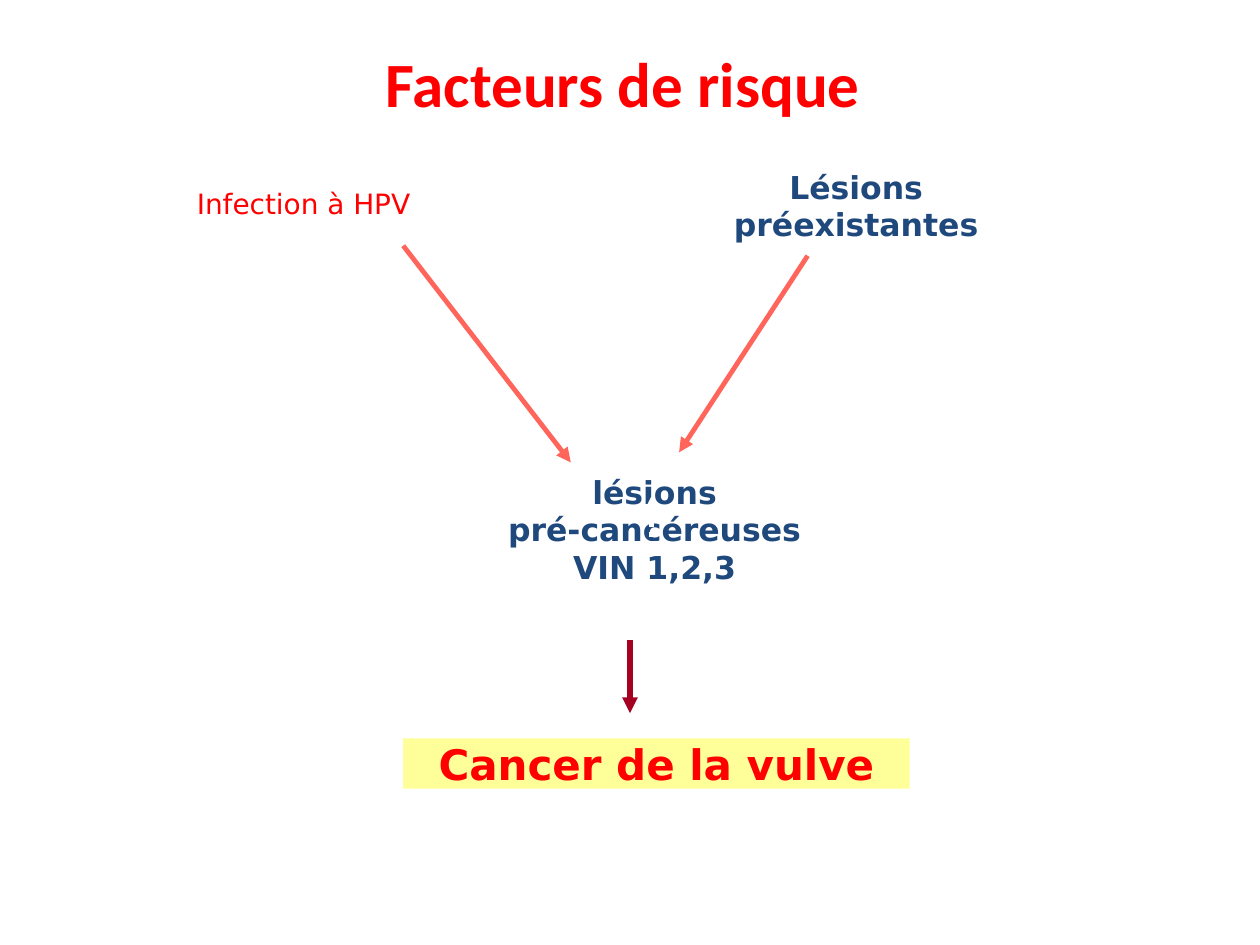
from lxml.etree import SubElement
from pptx import Presentation
from pptx.dml.color import RGBColor
from pptx.enum.dml import MSO_LINE
from pptx.enum.shapes import MSO_CONNECTOR
from pptx.enum.text import MSO_ANCHOR, MSO_AUTO_SIZE, PP_ALIGN
from pptx.oxml.ns import qn
from pptx.util import Inches, Pt

RED, NAVY, CORAL, CRIMSON = "FF0000", "1F497D", "FF655A", "A50021"
WHITE, YELLOW = "FFFFFF", "FFFF99"


def color(value):
    """Turn a hex string into a colour."""
    return RGBColor.from_string(value)


def place(shape, left, top, width, height):
    """Set the position and size of a shape in inches."""
    shape.left, shape.top = Inches(left), Inches(top)
    shape.width, shape.height = Inches(width), Inches(height)


def format_text(frame, size, hue, font="DejaVu Sans", bold=True):
    """Centre every paragraph and format its runs."""
    for paragraph in frame.paragraphs:
        paragraph.alignment = PP_ALIGN.CENTER
        for run in paragraph.runs:
            run.font.name = font
            run.font.size = Pt(size)
            run.font.bold = bold
            run.font.color.rgb = color(hue)


def add_title(slide, text):
    """Fill and place the title placeholder."""
    title = slide.shapes.title
    place(title, 0.75, 0.23, 8.5, 0.85)
    title.text_frame.text = text
    title.text_frame.vertical_anchor = MSO_ANCHOR.MIDDLE
    format_text(title.text_frame, 36, RED, "Calibri")


def add_label(slide, text, box, size, hue, bold=True, fill=None, wrap=True):
    """Add a centred label without margins, on a fill if one is given."""
    label = slide.shapes.add_textbox(*map(Inches, box))
    if fill:
        label.fill.solid()
        label.fill.fore_color.rgb = color(fill)
    frame = label.text_frame
    frame.margin_left = frame.margin_right = 0
    frame.margin_top = frame.margin_bottom = 0
    frame.word_wrap = wrap
    frame.auto_size = MSO_AUTO_SIZE.SHAPE_TO_FIT_TEXT
    frame.text = text
    format_text(frame, size, hue, bold=bold)


def add_arrow(slide, start, end, hue, width, dotted=False):
    """Add an arrow; a dotted one points both ways."""
    arrow = slide.shapes.add_connector(
        MSO_CONNECTOR.STRAIGHT, *map(Inches, start + end))
    arrow.line.color.rgb = color(hue)
    arrow.line.width = Pt(width)
    properties = arrow.line._get_or_add_ln()
    if dotted:
        arrow.line.dash_style = MSO_LINE.ROUND_DOT
        SubElement(properties, qn("a:headEnd"), type="triangle")
    SubElement(properties, qn("a:tailEnd"), type="triangle")
    SubElement(arrow._element.spPr, qn("a:effectLst"))


def main():
    """Build the risk factor slide."""
    deck = Presentation()
    deck.slide_width, deck.slide_height = Inches(10), Inches(7.5)
    slide = deck.slides.add_slide(deck.slide_layouts[5])
    add_title(slide, "Facteurs de risque ")
    add_label(slide, "Cancer de la vulve", (3.2, 5.86, 4.02, 0.4), 24, RED,
              fill=YELLOW)
    add_label(slide, "Lésions préexistantes", (5.47, 1.33, 2.65, 0.61), 18, NAVY)
    add_label(slide, "lésions\npré-cancéreuses\nVIN 1,2,3",
              (3.75, 3.75, 2.89, 0.91), 18, NAVY)
    add_label(slide, "Infection à HPV", (1.54, 1.48, 1.74, 0.27), 16, RED,
              bold=False, wrap=False)
    add_arrow(slide, (5.17, 3.94), (5.17, 4.42), WHITE, 3, dotted=True)
    add_arrow(slide, (3.2, 1.95), (4.53, 3.67), CORAL, 2.75)
    add_arrow(slide, (6.41, 2.03), (5.39, 3.59), CORAL, 2.75)
    add_arrow(slide, (5, 5.08), (5, 5.66), CRIMSON, 3)
    deck.save("out.pptx")


if __name__ == "__main__":
    main()
